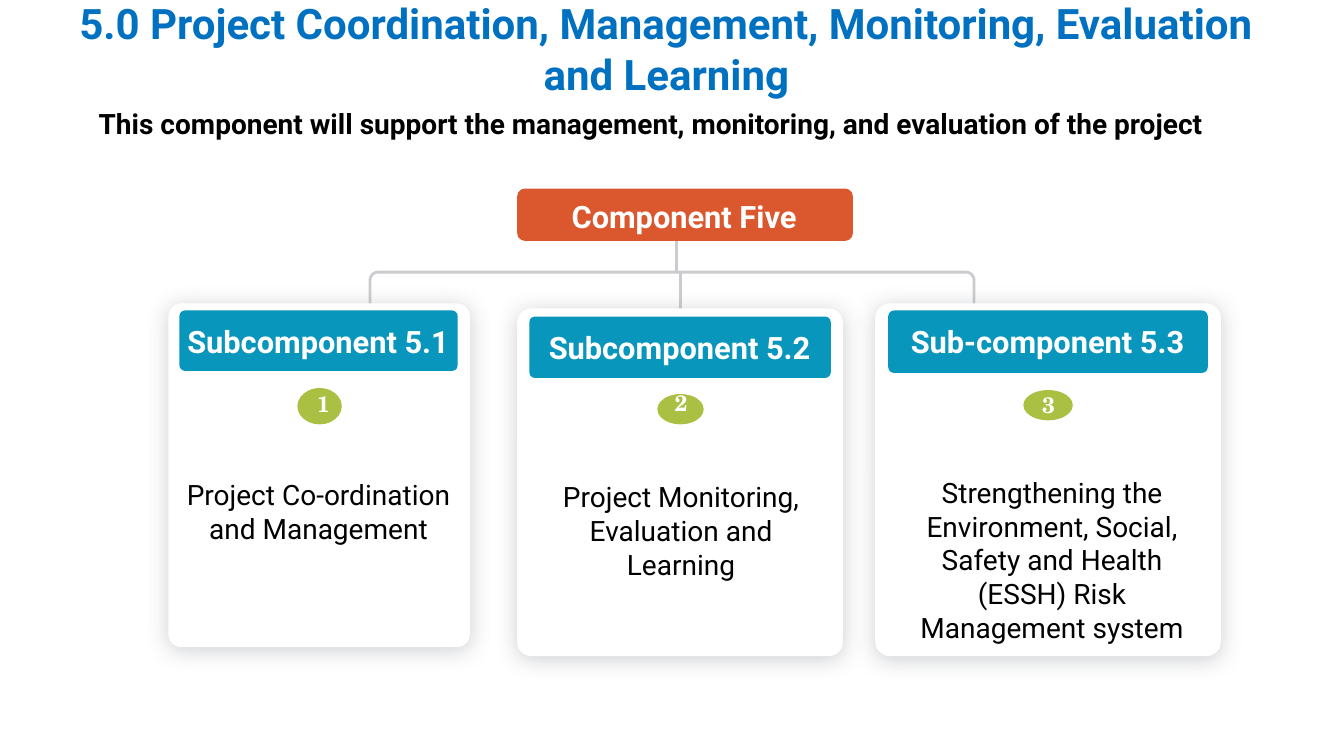
from math import cos, pi, sin

from lxml.etree import SubElement as Sub
from pptx import Presentation
from pptx.dml.color import RGBColor
from pptx.enum.shapes import MSO_CONNECTOR as Link, MSO_SHAPE as Kind
from pptx.enum.text import MSO_ANCHOR as Anchor, PP_ALIGN as Align
from pptx.oxml.ns import qn
from pptx.util import Inches, Pt

WHITE = RGBColor(0xFF, 0xFF, 0xFF)
BLACK = RGBColor(0, 0, 0)
BLUE = RGBColor(0x00, 0x70, 0xC0)
TEAL = RGBColor(0x08, 0x96, 0xBC)
GREEN = RGBColor(0xAA, 0xC0, 0x42)
ORANGE = RGBColor(0xDB, 0x58, 0x2E)
GREY = RGBColor(0xCA, 0xCC, 0xCF)
SHADE = RGBColor(0x8D, 0x90, 0x98)
SANS, SERIF = "Roboto", "TeX Gyre Schola"

CARDS = [
    dict(head="Subcomponent 5.1", num="1",
         note="Project Co-ordination and Management",
         box=(1.67, 3.01, 2.99, 3.41), band=(1.78, 3.08, 2.76, 0.6),
         dot=(2.95, 3.85, 0.44, 0.36), mark=(3.03, 3.85, 0.36, 0.31),
         body=(1.78, 4.72, 2.76, 0.72)),
    dict(head="Subcomponent 5.2", num="2", stem=(6.75, 2.7, 3.22),
         note="Project Monitoring, Evaluation and Learning",
         box=(5.13, 3.06, 3.23, 3.45), band=(5.25, 3.14, 2.99, 0.61),
         dot=(6.52, 3.91, 0.46, 0.3), mark=(6.61, 3.84, 0.29, 0.31),
         body=(5.26, 4.74, 2.99, 1.05)),
    dict(head="Sub-component 5.3", num="3",
         note="Strengthening the Environment, Social, Safety and Health "
              "(ESSH) Risk Management system",
         box=(8.68, 3.01, 3.43, 3.5), band=(8.81, 3.08, 3.17, 0.62),
         dot=(10.15, 3.87, 0.49, 0.3), mark=(10.25, 3.86, 0.3, 0.31),
         body=(8.85, 4.7, 3.17, 1.73)),
]


def write(shape, text, size=22, color=WHITE, bold=True, font=SANS,
          align=Align.CENTER, anchor=Anchor.MIDDLE, pad=(0.02, 0.02)):
    """Fill a shape with one formatted paragraph."""
    frame = shape.text_frame
    frame.word_wrap = True
    frame.vertical_anchor = anchor
    frame.margin_left = frame.margin_right = Inches(pad[0])
    frame.margin_top = frame.margin_bottom = Inches(pad[1])
    para = frame.paragraphs[0]
    para.alignment = align
    run = para.add_run()
    run.text = text
    run.font.size, run.font.bold, run.font.name = Pt(size), bold, font
    run.font.color.rgb = color


def label(shapes, at, text, **form):
    """Add a text box."""
    write(shapes.add_textbox(*map(Inches, at)), text, **form)


def block(shapes, kind, at, color, round=None):
    """Add a plain filled shape."""
    shape = shapes.add_shape(kind, *map(Inches, at))
    shape.shadow.inherit = False
    shape.fill.solid()
    shape.fill.fore_color.rgb = color
    shape.line.fill.background()
    if round is not None:
        shape.adjustments[0] = round
    return shape


def shade(shape):
    """Give a shape a soft shadow below it."""
    effects = shape._element.spPr.find(qn("a:effectLst"))
    outer = Sub(effects, qn("a:outerShdw"), blurRad=str(Pt(16)),
                dist=str(Pt(2)), dir="5400000", algn="t", rotWithShape="0")
    tint = Sub(outer, qn("a:srgbClr"), val=str(SHADE))
    Sub(tint, qn("a:alpha"), val="41000")


def stem(shapes, x, top, end):
    """Add a vertical grey line."""
    line = shapes.add_connector(Link.STRAIGHT, Inches(x), Inches(top),
                                Inches(x), Inches(end))
    line.line.color.rgb = GREY
    line.line.width = Pt(2)
    Sub(line._element.spPr, qn("a:effectLst"))


def bracket(shapes, left, top, right, ends, bend=0.08):
    """Add an open bracket with rounded upper corners."""
    turns = [pi - step * pi / 16 for step in range(9)]
    points = [(left + bend + bend * cos(turn), top + bend - bend * sin(turn))
              for turn in turns]
    points += [(left + right - x, y) for x, y in reversed(points)]
    points.append((right, ends[1]))
    build = shapes.build_freeform(Inches(left), Inches(ends[0]))
    build.add_line_segments([(Inches(x), Inches(y)) for x, y in points],
                            close=False)
    shape = build.convert_to_shape()
    shape.shadow.inherit = False
    shape.fill.background()
    shape.line.color.rgb = GREY
    shape.line.width = Pt(2)


def card(slide, data):
    """Add one grouped subcomponent card."""
    shapes = slide.shapes.add_group_shape().shapes
    if "stem" in data:
        stem(shapes, *data["stem"])
    shade(block(shapes, Kind.ROUNDED_RECTANGLE, data["box"], WHITE, 0.043))
    block(shapes, Kind.OVAL, data["dot"], GREEN)
    label(shapes, data["mark"], data["num"], size=16, font=SERIF)
    label(shapes, data["body"], data["note"], size=20, color=BLACK,
          bold=False, anchor=Anchor.TOP)
    block(shapes, Kind.ROUNDED_RECTANGLE, data["band"], TEAL, 0.093)
    x, y, wide, _ = data["band"]
    head = block(shapes, Kind.RECTANGLE,
                 (x + 0.05, y + 0.1, wide - 0.11, 0.41), TEAL)
    write(head, data["head"])


def main():
    """Build and save the slide."""
    deck = Presentation()
    deck.slide_width, deck.slide_height = Inches(13.33), Inches(7.5)
    slide = deck.slides.add_slide(deck.slide_layouts[6])
    shapes = slide.shapes
    bracket(shapes, 3.67, 2.7, 9.66, (3.44, 3.4))
    stem(shapes, 6.71, 2.1, 2.7)
    block(shapes, Kind.ROUNDED_RECTANGLE, (5.13, 1.87, 3.33, 0.52),
          ORANGE, 0.15)
    label(shapes, (5.39, 1.94, 2.79, 0.41), "Component Five")
    for data in CARDS:
        card(slide, data)
    plain = dict(anchor=Anchor.TOP, pad=(0.1, 0.05))
    label(shapes, (0.53, -0.07, 12.16, 1.11),
          "5.0 Project Coordination, Management, Monitoring, Evaluation "
          "and Learning", size=30, color=BLUE, **plain)
    label(shapes, (0.88, 1.01, 11.81, 0.44),
          "This component will support the management, monitoring, and "
          "evaluation of the project", size=20, color=BLACK,
          align=Align.LEFT, **plain)
    deck.save("out.pptx")


if __name__ == "__main__":
    main()
